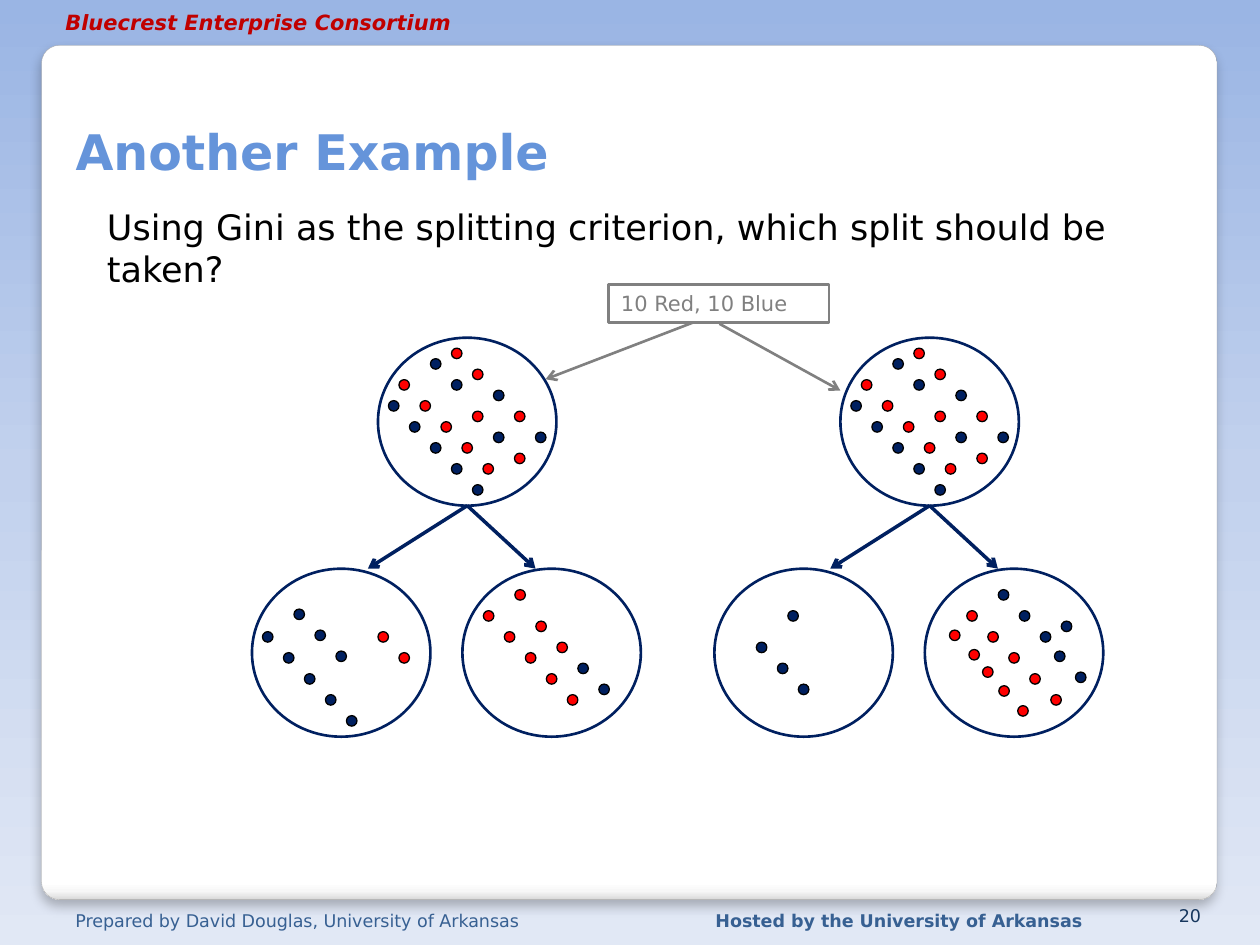
from dataclasses import dataclass

from lxml.etree import SubElement as Sub
from pptx import Presentation
from pptx.dml.color import RGBColor as RGB
from pptx.enum.shapes import MSO_CONNECTOR as Conn, MSO_SHAPE as Kind
from pptx.enum.text import MSO_ANCHOR as Anchor, PP_ALIGN as Align
from pptx.oxml.ns import qn
from pptx.util import Inches, Pt


@dataclass(frozen=True)
class Theme:
    font: str = "DejaVu Sans"
    navy: str = "002060"
    red: str = "FF0000"
    black: str = "000000"
    gray: str = "808080"
    brand: str = "C00000"
    title: str = "6594DA"
    foot: str = "376092"
    page: str = "17375E"
    edge: str = "A4A4A4"
    sky: tuple = ((0, "9AB5E4"), (50, "C2D1ED"), (100, "E1E8F5"))
    card: tuple = ((0, "FFFFFF"), (98, "FFFFFF"), (99, "F7F7F7"), (100, "DADADA"))
    head_size: int = 28
    body_size: int = 20
    note_size: int = 12
    foot_size: int = 10


T = Theme()
STEP = 1 / 12  # dot grid pitch, also the dot diameter
WIDE, HIGH = 17 * STEP, 16 * STEP  # size of a node

# Dot places in grid steps from the node's top left: (blue, red)
ROOT = (
    [(1, 6), (3, 8), (5, 10), (7, 12), (9, 14), (5, 2), (7, 4), (11, 5), (11, 9), (15, 9)],
    [(2, 4), (4, 6), (6, 8), (8, 10), (10, 12), (7, 1), (9, 3), (9, 7), (13, 7), (13, 11)],
)
TREES = [
    (2, (
        ([(1, 6), (3, 8), (5, 10), (7, 12), (9, 14), (4, 3.85), (6, 5.85), (8, 7.85)],
         [(12, 6), (14, 8)]),
        ([(11, 9), (13, 11)],
         [(2, 4), (4, 6), (6, 8), (8, 10), (10, 12), (5, 2), (7, 5), (9, 7)]),
    )),
    (5.67, (
        ([(4, 7), (6, 9), (8, 11), (7, 4)], []),
        ([(7, 2), (9, 4), (11, 6), (13, 5), (12.35, 7.85), (14.35, 9.85)],
         [(4, 4), (6, 6), (8, 8), (10, 10), (12, 12), (2.35, 5.85), (4.2, 7.7),
          (5.5, 9.35), (7.05, 11.15), (8.85, 13.05)]),
    )),
]


def blend(root, fill, stops):
    """Give a fill a top-to-bottom gradient."""
    fill.gradient()
    fill.gradient_angle = 270
    rows = root.find(".//" + qn("a:gsLst"))
    for old in list(rows):
        rows.remove(old)
    for pos, tone in stops:
        stop = Sub(rows, qn("a:gs"), pos=str(pos * 1000))
        Sub(stop, qn("a:srgbClr"), val=tone)


def shape(slide, kind, box, fill, line, width):
    item = slide.shapes.add_shape(kind, *map(Inches, box))
    item.shadow.inherit = False
    if fill:
        item.fill.solid()
        item.fill.fore_color.rgb = RGB.from_string(fill)
    else:
        item.fill.background()
    item.line.color.rgb = RGB.from_string(line)
    item.line.width = Pt(width)
    return item


def write(item, text, size, tone, align=Align.LEFT, anchor=Anchor.TOP, wrap=True, **look):
    frame = item.text_frame
    frame.word_wrap, frame.vertical_anchor = wrap, anchor
    para = frame.paragraphs[0]
    para.alignment = align
    run = para.add_run()
    run.text = text
    run.font.color.rgb = RGB.from_string(tone)
    for key, val in {"name": T.font, "size": Pt(size), **look}.items():
        setattr(run.font, key, val)


def label(slide, box, *args, **look):
    write(slide.shapes.add_textbox(*map(Inches, box)), *args, **look)


def arrow(slide, start, end, tone, width):
    link = slide.shapes.add_connector(Conn.STRAIGHT, *map(Inches, (*start, *end)))
    link.line.color.rgb = RGB.from_string(tone)
    link.line.width = Pt(width)
    Sub(link.line._get_or_add_ln(), qn("a:tailEnd"), type="arrow")
    Sub(link._element.spPr, qn("a:effectLst"))


def frame(slide, box):
    """Background and the white card with its soft shadow."""
    blend(slide.element, slide.background.fill, T.sky)
    card = shape(slide, Kind.ROUNDED_RECTANGLE, box, None, T.edge, 0.16)
    card.adjustments[0] = 0.021
    blend(card._element, card.fill, T.card)
    glow = Sub(card._element.spPr.find(qn("a:effectLst")), qn("a:outerShdw"),
               blurRad=str(Pt(6)), dist=str(Pt(4)), dir="5400000", rotWithShape="0")
    tone = Sub(glow, qn("a:srgbClr"), val=T.black)
    Sub(tone, qn("a:alpha"), val="25000")
    slide.shapes._spTree.insert(2, card._element)  # behind the title


def heading(slide, box):
    title = slide.shapes.title
    for key, val in zip(("left", "top", "width", "height"), box):
        setattr(title, key, Inches(val))
    write(title, "Another Example", T.head_size, T.title, anchor=Anchor.BOTTOM, bold=True)


def footer(slide, left, top):
    high = 0.23
    label(slide, (left, top, 4.46, high), "Prepared by David Douglas, University of Arkansas",
          T.foot_size, T.foot)
    label(slide, (left + 5.08, top, 3.42, high), "Hosted by the University of Arkansas",
          T.foot_size, T.foot, bold=True)
    label(slide, (left + 8.63, top, 0.5, high), "20", T.foot_size, T.page,
          align=Align.RIGHT, anchor=Anchor.BOTTOM)


def node(slide, left, top, dots):
    """A circle with its blue and red dots."""
    shape(slide, Kind.FLOWCHART_CONNECTOR, (left, top, WIDE, HIGH), None, T.navy, 1.5)
    for tone, spots in zip((T.navy, T.red), dots):
        for col, row in spots:
            box = (left + col * STEP, top + row * STEP, STEP, STEP)
            shape(slide, Kind.FLOWCHART_CONNECTOR, box, tone, T.black, 0.75)


def tree(slide, left, top, leaves):
    """A root node split into two leaves."""
    drop = 22 * STEP
    node(slide, left + 1, top, ROOT)
    foot = (left + 1 + WIDE / 2, top + HIGH)
    for shift, tip, dots in zip((0, 1.67), (0.92, 2.25), leaves):
        node(slide, left + shift, top + drop, dots)
        arrow(slide, foot, (left + tip, top + drop), T.navy, 2)


def callout(slide, left, top):
    """The class counts, pointing at both roots."""
    box = shape(slide, Kind.RECTANGLE, (left, top, 1.75, 0.3), None, T.gray, 1.5)
    write(box, "10 Red, 10 Blue", T.note_size, T.gray)
    for start, end in (((0.67, 0.3), (-0.5, 0.75)), ((0.88, 0.31), (1.84, 0.84))):
        arrow(slide, (left + start[0], top + start[1]),
              (left + end[0], top + end[1]), T.gray, 1.5)


def main():
    deck = Presentation()
    deck.slide_width, deck.slide_height = Inches(10), Inches(7.5)
    slide = deck.slides.add_slide(deck.slide_layouts[5])
    frame(slide, (0.33, 0.36, 9.33, 6.78))
    label(slide, (0.42, 0.03, 3.27, 0.3), "Bluecrest Enterprise Consortium",
          T.note_size, T.brand, wrap=False, bold=True, italic=True)
    heading(slide, (0.5, 0.33, 8.95, 1.15))
    footer(slide, 0.5, 7.17)
    for left, leaves in TREES:
        tree(slide, left, 2.68, leaves)
    callout(slide, 4.83, 2.26)
    label(slide, (0.75, 1.58, 8.92, 0.77),
          "Using Gini as the splitting criterion, which split should be taken?",
          T.body_size, T.black)
    deck.save("out.pptx")


if __name__ == "__main__":
    main()
